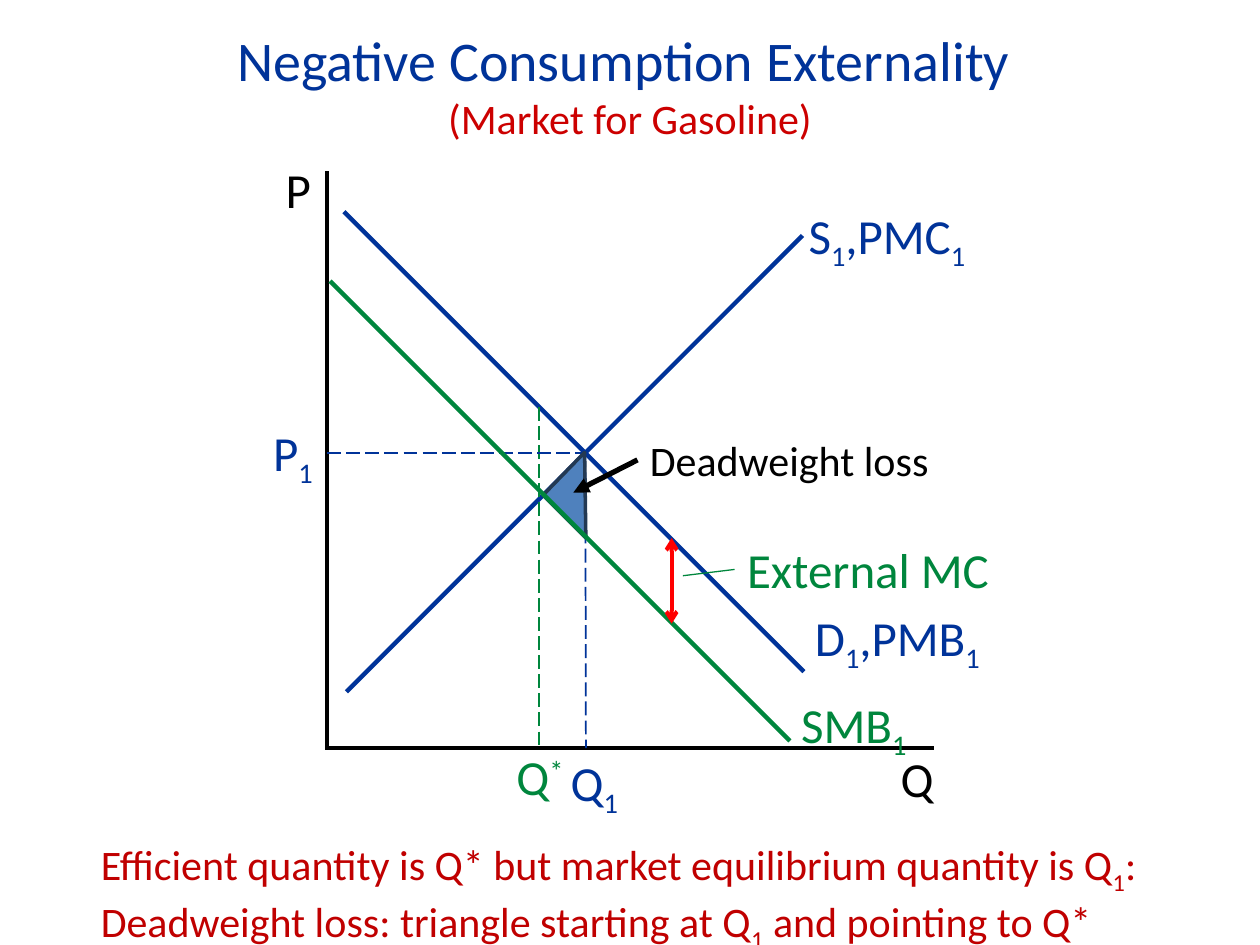
from lxml import etree
from pptx import Presentation
from pptx.dml.color import RGBColor
from pptx.enum import dml, shapes, text
from pptx.oxml.ns import qn
from pptx.util import Pt

THEME = {
    "font": "Calibri",
    "black": "000000", "blue": "003399", "green": "00863D", "red": "FF0000",
    "title": "003399", "subtitle": "CC0000", "note": "C00000",
    "loss": "4F81BD", "loss_edge": "233953",
    "title_size": 32, "label_size": 28, "text_size": 24,
}
SHIFTS = {"_": "-25000", "^": "30000"}  # subscript, superscript

# Title and note: (markup, colour, size); "|" separates runs
TITLE = [("Negative Consumption Externality ", "title", "title_size"),
         ("(Market for Gasoline)", "subtitle", "text_size")]
NOTE = [("Efficient quantity is Q* but market equilibrium quantity is Q|_1|:", "note", "text_size"),
        ("Deadweight loss: triangle starting at Q|_1| and pointing to Q*", "note", "text_size")]
TITLE_BOX = (50.4, 10.4, 619.2, 75)
NOTE_BOX = (50.4, 475.6, 628, 65.5)

# Key points of the diagram
LEFT, BOTTOM = 187, 427.5
EQUILIBRIUM = (334.5, 259)
EFFICIENT_Q, EFFICIENT_TOP = 308.2, 232.5
LOSS = [(334.1, 258.5), (334.8, 307.4), (310.3, 283)]

# Lines: start, end, colour, width, dashed, arrow at start, arrow at end
LINES = [
    ((198, 395.3), (458.6, 134.6), "blue", 2.5, False, None, None),
    ((LEFT, 98), (LEFT, 428.7), "black", 2.5, False, None, None),
    ((LEFT, BOTTOM), (533.5, BOTTOM), "black", 2.5, False, None, None),
    ((196.6, 121), (459.4, 383.8), "blue", 2.5, False, None, None),
    (EQUILIBRIUM, (334.8, BOTTOM), "blue", 1, True, None, None),
    ((EFFICIENT_Q, EFFICIENT_TOP), (EFFICIENT_Q, BOTTOM), "green", 1, True, None, None),
    ((LEFT, EQUILIBRIUM[1]), EQUILIBRIUM, "blue", 1, True, None, None),
    ((390.2, 329), (419.8, 325.4), "green", 0.75, False, None, None),
]
# Lines drawn over the deadweight loss
FRONT_LINES = [
    ((364.3, 262.8), (327.6, 281.5), "black", 3, False, None, "triangle"),
    ((188.6, 160.6), (451.4, 423.4), "green", 2.5, False, None, None),
    ((383.8, 307.4), (383.8, 356.4), "red", 2.25, False, "arrow", "arrow"),
]

# Labels: markup, box, colour, size, line spacing, wrap
LABELS = [
    ("D|_1|,PMB|_1", (458.6, 343.4, 185.8, 41), "blue", "label_size", 1, True),
    ("Q", (507.6, 424, 36.7, 41), "black", "label_size", 1, True),
    ("P", (156.2, 94.3, 32.4, 35.3), "black", "label_size", 0.8, True),
    ("S|_1|,PMC|_1", (455, 113.8, 108, 41), "blue", "label_size", 1, True),
    ("Q|_1", (319, 429.8, 54, 35.3), "blue", "label_size", 0.8, True),
    ("SMB|_1", (450.7, 393.1, 86.4, 41), "green", "label_size", 1, True),
    ("Q|^*", (288, 429.8, 54, 35.3), "green", "label_size", 0.8, True),
    ("External MC", (419.8, 304.6, 157.7, 41), "green", "label_size", 1, True),
    ("Deadweight loss", (364.3, 244.8, 175, 36), "black", "text_size", 1, False),
    ("P|_1", (149, 241.2, 41.8, 35.3), "blue", "label_size", 0.8, True),
]


def rgb(name):
    return RGBColor.from_string(THEME[name])


def points(values):
    return [Pt(v) for v in values]


def write(p, markup, color, size, spacing=1):
    p.font.name = THEME["font"]
    p.font.size = Pt(THEME[size])
    p.font.color.rgb = rgb(color)
    p.line_spacing = spacing
    for piece in markup.split("|"):
        r = p.add_run()
        r.text = piece.lstrip("_^")
        if piece[0] in SHIFTS:
            r._r.get_or_add_rPr().set("baseline", SHIFTS[piece[0]])


def fill_placeholder(sp, box, paragraphs):
    sp.left, sp.top, sp.width, sp.height = points(box)
    tf = sp.text_frame
    tf.auto_size = text.MSO_AUTO_SIZE.NONE
    for i, content in enumerate(paragraphs):
        write(tf.add_paragraph() if i else tf.paragraphs[0], *content)
    return tf


def add_label(slide, markup, box, color, size, spacing, wrap):
    tf = slide.shapes.add_textbox(*points(box)).text_frame
    tf.word_wrap = wrap
    write(tf.paragraphs[0], markup, color, size, spacing)


def add_line(slide, start, end, color, width, dashed, head, tail):
    sp = slide.shapes.add_connector(shapes.MSO_CONNECTOR.STRAIGHT, *points(start + end))
    sp.line.color.rgb = rgb(color)
    sp.line.width = Pt(width)
    if dashed:
        sp.line.dash_style = dml.MSO_LINE.LONG_DASH
    ln = sp.line._get_or_add_ln()
    for tag, kind in (("a:headEnd", head), ("a:tailEnd", tail)):
        if kind:
            etree.SubElement(ln, qn(tag), type=kind)
    etree.SubElement(sp._element.spPr, qn("a:effectLst"))


def add_deadweight_loss(slide):
    first, *rest = [points(corner) for corner in LOSS]
    builder = slide.shapes.build_freeform(*first)
    builder.add_line_segments(rest, close=True)
    sp = builder.convert_to_shape()
    sp.shadow.inherit = False
    sp.fill.solid()
    sp.fill.fore_color.rgb = rgb("loss")
    sp.line.color.rgb = rgb("loss_edge")
    sp.line.width = Pt(2)


def main():
    prs = Presentation()
    prs.slide_width, prs.slide_height = Pt(720), Pt(540)
    slide = prs.slides.add_slide(prs.slide_layouts[1])

    tf = fill_placeholder(slide.shapes.title, TITLE_BOX, TITLE)
    tf.vertical_anchor = text.MSO_ANCHOR.MIDDLE
    tf = fill_placeholder(slide.placeholders[1], NOTE_BOX, NOTE)
    for p in tf.paragraphs:
        pPr = p._p.get_or_add_pPr()
        pPr.set("marL", "0")
        pPr.set("indent", "0")
        p.space_before = Pt(0)
        pPr.insert_element_before(etree.Element(qn("a:buNone")), "a:tabLst", "a:defRPr", "a:extLst")

    for line in LINES:
        add_line(slide, *line)
    add_deadweight_loss(slide)
    for line in FRONT_LINES:
        add_line(slide, *line)
    for label in LABELS:
        add_label(slide, *label)
    prs.save("out.pptx")


if __name__ == "__main__":
    main()
